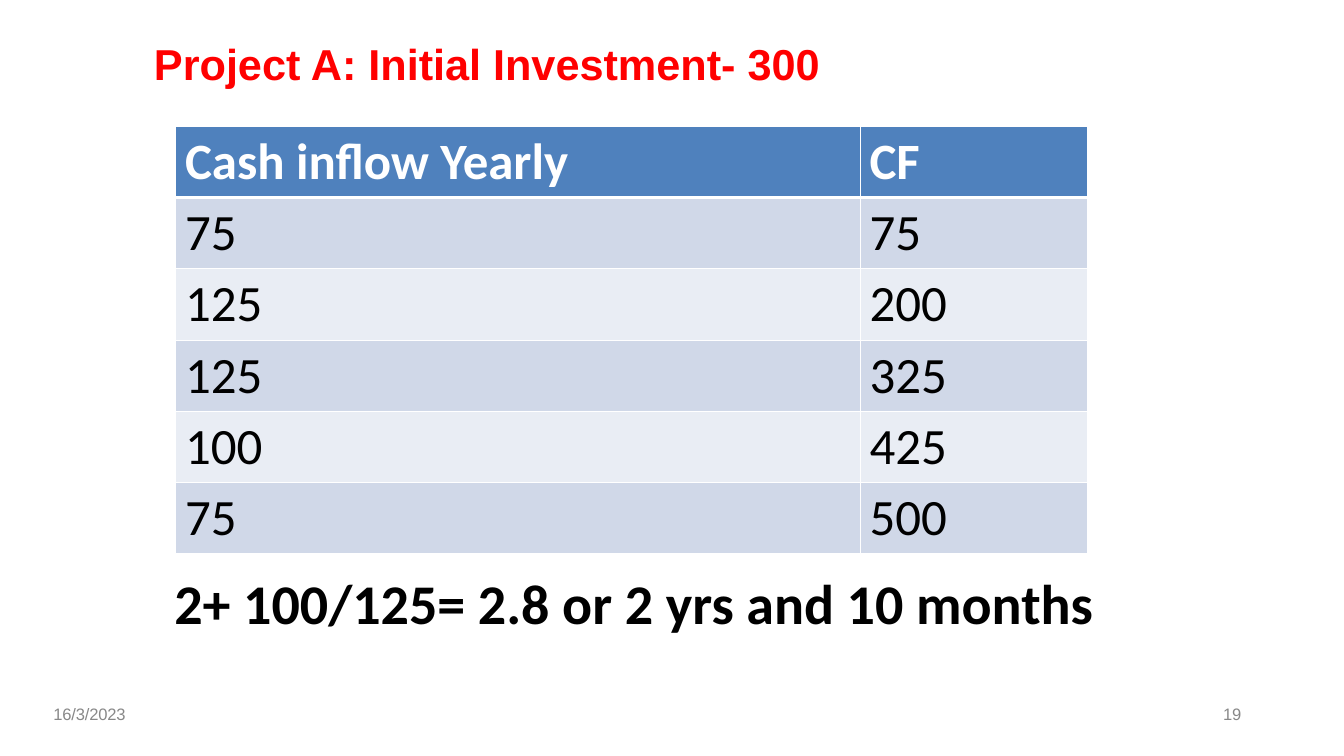
import pptx
import pptx.dml.color
import pptx.enum.text
import pptx.oxml
import pptx.oxml.ns
import pptx.util

Pt = pptx.util.Pt
RGBColor = pptx.dml.color.RGBColor

RED = RGBColor(0xFF, 0x00, 0x00)
BLACK = RGBColor(0x00, 0x00, 0x00)
WHITE = RGBColor(0xFF, 0xFF, 0xFF)
GREY = RGBColor(0x88, 0x88, 0x88)
HEADER_BLUE = RGBColor(0x4F, 0x81, 0xBD)
BANDS = (RGBColor(0xD0, 0xD8, 0xE8), RGBColor(0xE9, 0xED, 0xF4))

CASH_FLOWS = [
    ("Cash inflow Yearly", "CF"),
    ("75", "75"),
    ("125", "200"),
    ("125", "325"),
    ("100", "425"),
    ("75", "500"),
]


def write(tf, text, font="Calibri", size=40, color=BLACK, bold=False,
          indent=0, line=None, spacing=None):
    """Fill a text frame; spacing is between letters, in 1/100 pt."""
    p = tf.paragraphs[0]
    if line:
        p.line_spacing = Pt(line)
    if indent:
        p._p.get_or_add_pPr().set("marL", str(Pt(indent)))
    r = p.add_run()
    r.text = text
    r.font.name = font
    r.font.size = Pt(size)
    r.font.bold = bold
    r.font.color.rgb = color
    if spacing:
        r._r.get_or_add_rPr().set("spc", str(spacing))


def add_border(cell, side, width):
    ns = pptx.oxml.ns.nsdecls("a")
    cell._tc.get_or_add_tcPr().append(pptx.oxml.parse_xml(
        f'<a:{side} {ns} w="{Pt(width)}"><a:solidFill>'
        f'<a:srgbClr val="{WHITE}"/></a:solidFill></a:{side}>'))


class SlideBuilder:
    def __init__(self, prs):
        self.slide = prs.slides.add_slide(prs.slide_layouts[6])

    def text(self, text, left, top, width, height, **fmt):
        sp = self.slide.shapes.add_textbox(Pt(left), Pt(top), Pt(width), Pt(height))
        tf = sp.text_frame
        tf.word_wrap = True
        tf.auto_size = pptx.enum.text.MSO_AUTO_SIZE.NONE
        tf.margin_left = tf.margin_top = tf.margin_right = tf.margin_bottom = 0
        write(tf, text, **fmt)

    def table(self, rows, left, top, col_widths, row_height):
        table = self.slide.shapes.add_table(
            len(rows), len(col_widths), Pt(left), Pt(top),
            Pt(sum(col_widths)), Pt(row_height * len(rows))).table
        for col, width in zip(table.columns, col_widths):
            col.width = Pt(width)
        for i, row in enumerate(rows):
            header = i == 0
            for j, value in enumerate(row):
                cell = table.cell(i, j)
                write(cell.text_frame, value, bold=header,
                      color=WHITE if header else BLACK)
                for side in ("lnL", "lnR", "lnT", "lnB"):
                    thick = (side == "lnB" and i == 0) or (side == "lnT" and i == 1)
                    add_border(cell, side, 3 if thick else 1)
                cell.fill.solid()
                cell.fill.fore_color.rgb = HEADER_BLUE if header else BANDS[(i - 1) % 2]


def main():
    prs = pptx.Presentation()
    prs.slide_width = Pt(1056)
    prs.slide_height = Pt(594)

    s = SlideBuilder(prs)
    s.text("Project A: Initial Investment- 300", 121, 29.5, 645, 82,
           font="Arial", size=34, color=RED, bold=True)
    s.text("2+ 100/125= 2.8 or 2 yrs and 10 months", 137, 447, 871, 106.5,
           size=44, bold=True)
    footer = dict(font="Arial", size=13, color=GREY, line=15.3, spacing=-10)
    s.text("16/3/2023", 41, 553.7, 79, 15, indent=1, **footer)
    s.text("19", 952, 553.7, 24.5, 30, indent=9, **footer)
    s.table(CASH_FLOWS, 138.2, 99.4, (537.8, 178.6), 55.2)

    prs.save("out.pptx")


if __name__ == "__main__":
    main()
